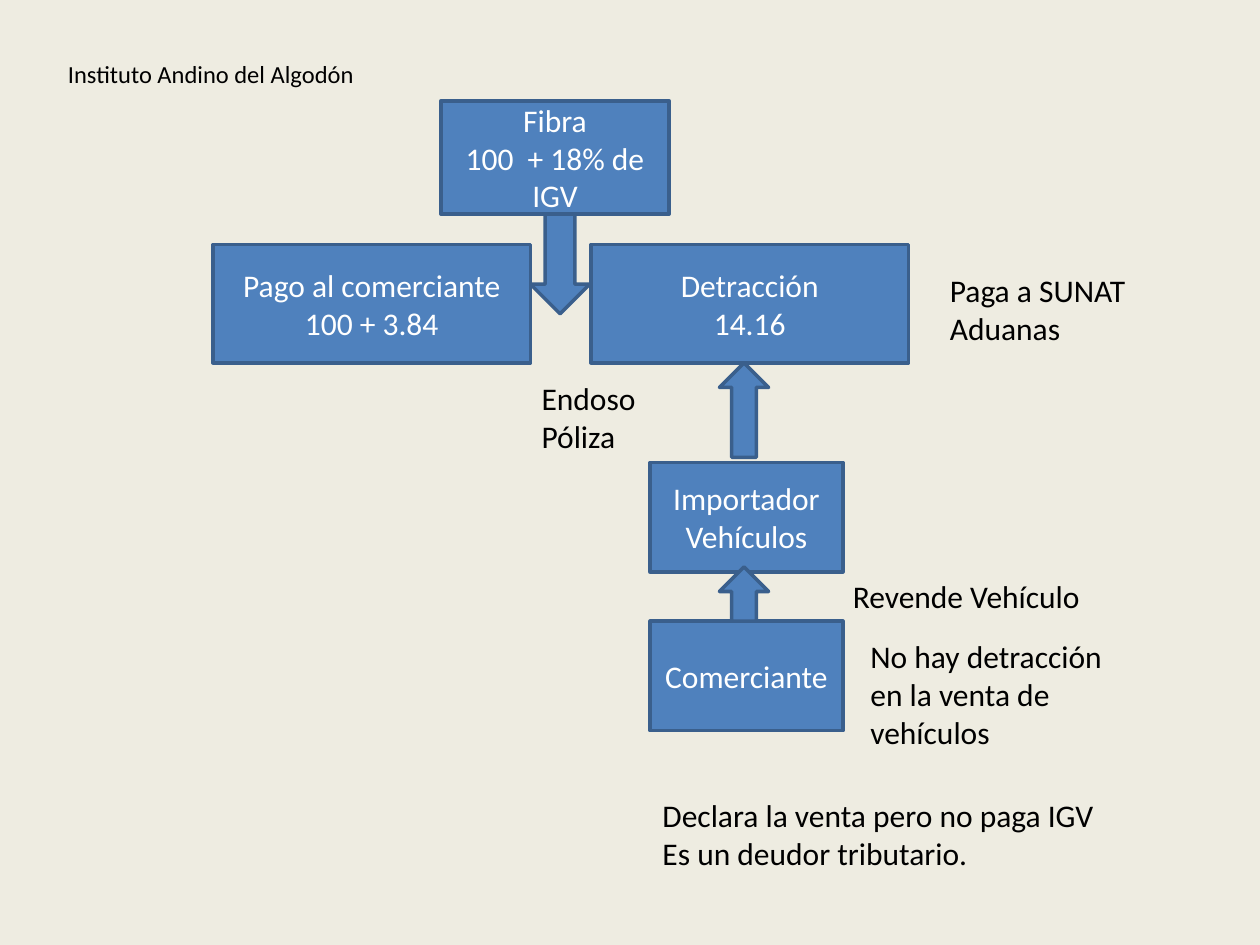
from typing import NamedTuple

from pptx import Presentation
from pptx.dml.color import RGBColor
from pptx.enum.shapes import MSO_SHAPE
from pptx.enum.text import MSO_ANCHOR, MSO_AUTO_SIZE, PP_ALIGN
from pptx.util import Inches, Pt

RECTANGLE = MSO_SHAPE.RECTANGLE
DOWN, UP = MSO_SHAPE.DOWN_ARROW, MSO_SHAPE.UP_ARROW
MIDDLE, TOP = MSO_ANCHOR.MIDDLE, MSO_ANCHOR.TOP
CENTER, LEFT = PP_ALIGN.CENTER, PP_ALIGN.LEFT
FIT_SHAPE = MSO_AUTO_SIZE.SHAPE_TO_FIT_TEXT

BLANK_LAYOUT = 6
CELL = Inches(0.1)  # the page is a grid of 100 columns by 75 rows
COLUMNS, ROWS = 100, 75
BACKGROUND, BLUE, DARK_BLUE = "EEECE1", "4F81BD", "3A5F8C"
WHITE, BLACK = "FFFFFF", "000000"


class Area(NamedTuple):
    column: float
    row: float
    width: float
    height: float

    def lengths(self) -> list[int]:
        return [round(cells * CELL) for cells in self]


class Block(NamedTuple):
    area: Area
    lines: tuple[str, ...] = ()
    kind: MSO_SHAPE = RECTANGLE


class Label(NamedTuple):
    area: Area
    lines: tuple[str, ...]
    size: int = 18


# Shared edges of the flow
PAYMENT_ROW, PAYMENT_WIDTH, PAYMENT_HEIGHT = 19.4, 25.2, 9.4
TRADER_COLUMN, TRADER_WIDTH, TRADER_HEIGHT = 51.6, 15.3, 8.7
UP_COLUMN, UP_WIDTH = 57.1, 3.9

BLOCKS = [
    Block(Area(35, 8, 18.1, 9), ("Fibra", "100  + 18% de IGV")),
    Block(Area(42.1, 17, 4.7, 7.9), kind=DOWN),
    Block(Area(16.9, PAYMENT_ROW, PAYMENT_WIDTH, PAYMENT_HEIGHT),
          ("Pago al comerciante", "100 + 3.84")),
    Block(Area(46.9, PAYMENT_ROW, PAYMENT_WIDTH, PAYMENT_HEIGHT),
          ("Detracción", "14.16")),
    Block(Area(TRADER_COLUMN, 36.7, TRADER_WIDTH, TRADER_HEIGHT),
          ("Importador", "Vehículos")),
    Block(Area(UP_COLUMN, 28.8, UP_WIDTH, 7.5), kind=UP),
    Block(Area(TRADER_COLUMN, 49.3, TRADER_WIDTH, TRADER_HEIGHT),
          ("Comerciante",)),
    Block(Area(UP_COLUMN, 45, UP_WIDTH, 4.3), kind=UP),
]

LABELS = [
    Label(Area(4.4, 4.2, 25.9, 3.4), ("Instituto Andino del Algodón",), 14),
    Label(Area(42, 29.6, 9.6, 7.1), ("Endoso", "Póliza")),
    Label(Area(66.7, 45.3, 20.3, 4), ("Revende Vehículo",)),
    Label(Area(74.4, 21, 16.1, 7.1), ("Paga a SUNAT", "Aduanas")),
    Label(Area(68.1, 50.1, 20.6, 10.1),
          ("No hay detracción", "en la venta de", "vehículos")),
    Label(Area(TRADER_COLUMN, 62.7, 36.7, 7.1),
          ("Declara la venta pero no paga IGV", "Es un deudor tributario.")),
]


def paint(target, color: str) -> None:
    """Give a fill one solid colour."""
    target.solid()
    target.fore_color.rgb = RGBColor.from_string(color)


def write(frame, lines: tuple[str, ...], size: int, color: str, align) -> None:
    for index, line in enumerate(lines):
        para = frame.paragraphs[0] if index == 0 else frame.add_paragraph()
        para.alignment = align
        span = para.add_run()
        span.text = line
        for name, value in {"name": "Calibri", "size": Pt(size)}.items():
            setattr(span.font, name, value)
        paint(span.font.fill, color)


def draw_block(page, block: Block) -> None:
    shape = page.shapes.add_shape(block.kind, *block.area.lengths())
    shape.shadow.inherit = False
    paint(shape.fill, BLUE)
    paint(shape.line.fill, DARK_BLUE)
    shape.line.width = Pt(2)
    shape.text_frame.vertical_anchor = MIDDLE
    write(shape.text_frame, block.lines, 18, WHITE, CENTER)


def draw_label(page, label: Label) -> None:
    box = page.shapes.add_textbox(*label.area.lengths())
    frame_format = {"word_wrap": False, "auto_size": FIT_SHAPE,
                    "vertical_anchor": TOP}
    for name, value in frame_format.items():
        setattr(box.text_frame, name, value)
    write(box.text_frame, label.lines, label.size, BLACK, LEFT)


def main() -> None:
    deck = Presentation()
    deck.slide_width, deck.slide_height = COLUMNS * CELL, ROWS * CELL
    page = deck.slides.add_slide(deck.slide_layouts[BLANK_LAYOUT])
    paint(page.background.fill, BACKGROUND)
    for block in BLOCKS:
        draw_block(page, block)
    for label in LABELS:
        draw_label(page, label)
    deck.save("out.pptx")


if __name__ == "__main__":
    main()
